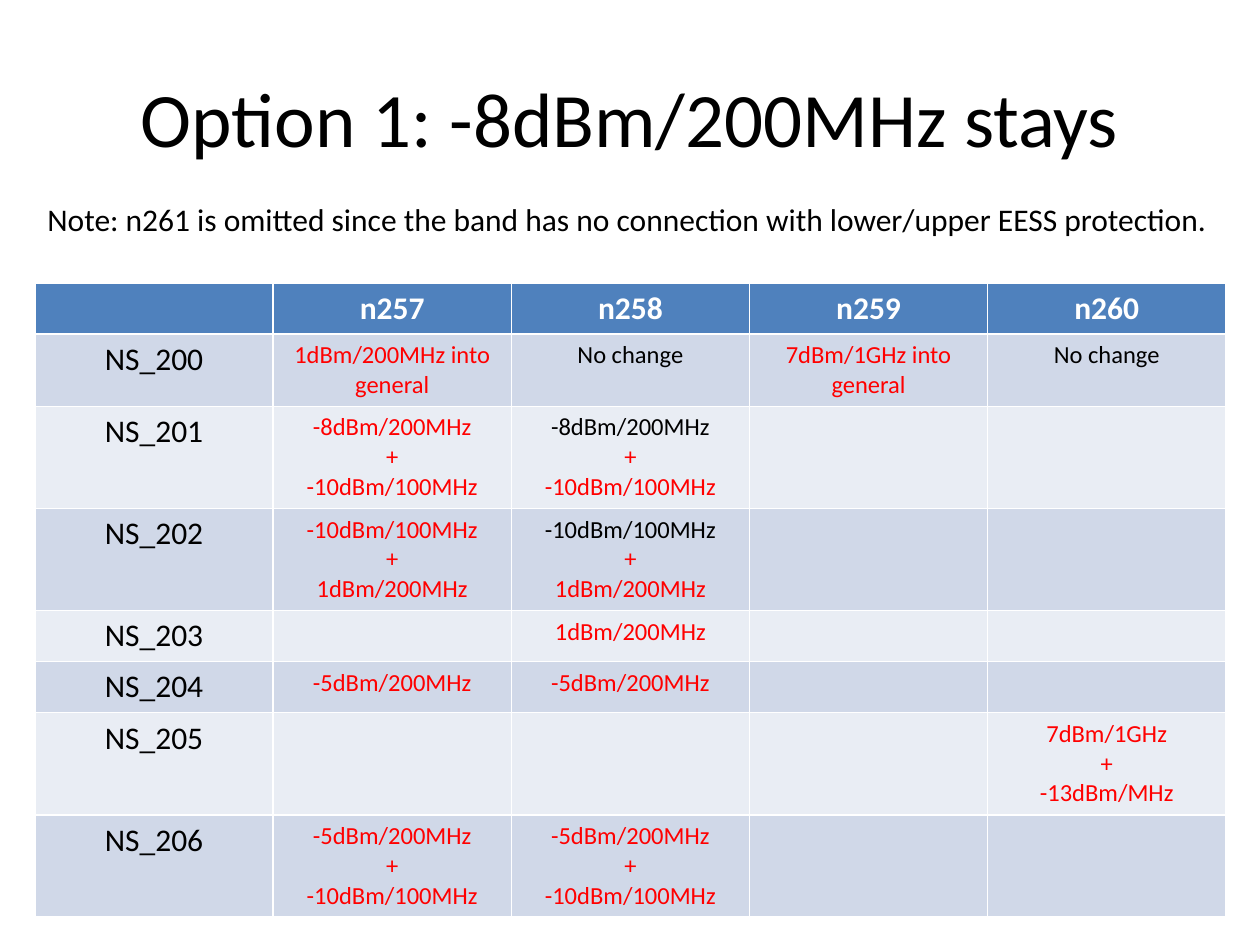
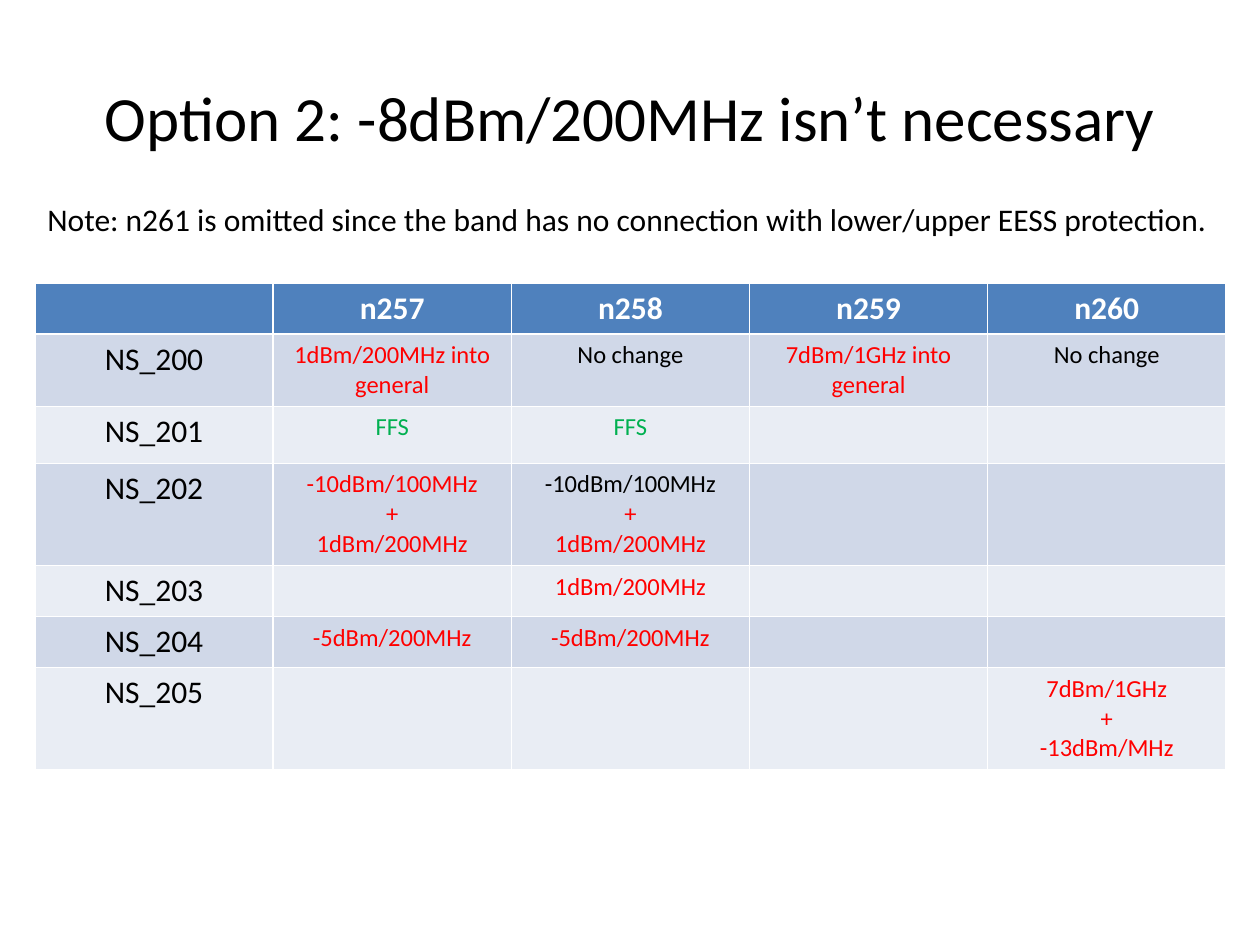
"""Build two slides that compare emission options per band."""
from dataclasses import dataclass

from pptx import Presentation
from pptx.dml.color import RGBColor
from pptx.enum import text as tx


@dataclass(frozen=True)
class Theme:
    """Colours and type of the deck."""
    font: str = "Calibri"
    black: str = "000000"
    white: str = "FFFFFF"
    red: str = "FF0000"
    green: str = "00B050"
    head: str = "4F81BD"
    bands: tuple = ("D0D8E8", "E9EDF4")
    large: int = 18
    small: int = 14


T = Theme()
SIZE = (1260, 945)
TITLE = (63, 38, 1134, 157)
NOTE = (35, 194, 1191, 50)
GRID = (35, 283, 1191)
NOTICE = "Note: n261 is omitted since the band has no connection with lower/upper EESS protection."
HEADS = ("", "n257", "n258", "n259", "n260")
HIGH = {1: 51, 2: 72, 3: 102}

# Cell: colour of the first line, then its lines; later lines are red.
NONE = (T.black,)
SAME = (T.black, "No change")
FFS = (T.green, "FFS")
FIVE = (T.red, "-5dBm/200MHz")
TEN = ("+", "-10dBm/100MHz")
ONE = ("-10dBm/100MHz", "+", "1dBm/200MHz")
ROWS = {
    "NS_200": (72, (T.red, "1dBm/200MHz into general"), SAME,
               (T.red, "7dBm/1GHz into general"), SAME),
    "NS_201": (102, (T.red, "-8dBm/200MHz", *TEN), (T.black, "-8dBm/200MHz", *TEN), NONE, NONE),
    "NS_202": (102, (T.red, *ONE), (T.black, *ONE), NONE, NONE),
    "NS_203": (51, NONE, (T.red, "1dBm/200MHz"), NONE, NONE),
    "NS_204": (51, FIVE, FIVE, NONE, NONE),
    "NS_205": (102, NONE, NONE, NONE, (T.red, "7dBm/1GHz", "+", "-13dBm/MHz")),
    "NS_206": (102, FIVE + TEN, FIVE + TEN, NONE, NONE),
}
LESS = {k: v for k, v in ROWS.items() if k != "NS_206"}
LESS["NS_201"] = (57, FFS, FFS, NONE, NONE)
DECK = (
    ("Option 1: -8dBm/200MHz stays", 44, ROWS),
    ("Option 2: -8dBm/200MHz isn’t necessary", 36, LESS),
)


def px(val):
    """Turn px into EMU."""
    return val * 914400 // 126


def place(shape, box):
    """Move a shape into a box."""
    for name, val in zip(("left", "top", "width", "height"), box):
        setattr(shape, name, px(val))


def write(frame, lines, size, bold=False, align=tx.PP_ALIGN.CENTER):
    """Fill a frame with one paragraph per (words, colour) pair."""
    for num, (words, ink) in enumerate(lines):
        para = frame.add_paragraph() if num else frame.paragraphs[0]
        para.alignment = align
        run = para.add_run()
        run.text = words
        form = {"name": T.font, "size": size * 12700, "bold": bold}
        for name, val in form.items():
            setattr(run.font, name, val)
        run.font.color.rgb = RGBColor.from_string(ink)


def title(slide, box, words, size):
    """Move and format the title."""
    shape = slide.shapes.title
    place(shape, box)
    frame = shape.text_frame
    form = {"auto_size": tx.MSO_AUTO_SIZE.NONE, "word_wrap": True,
            "vertical_anchor": tx.MSO_ANCHOR.MIDDLE}
    for name, val in form.items():
        setattr(frame, name, val)
    write(frame, [(words, T.black)], size)


def note(slide, box):
    """Add the note above the table."""
    frame = slide.shapes.add_textbox(*map(px, box)).text_frame
    frame.word_wrap = True
    frame.auto_size = tx.MSO_AUTO_SIZE.SHAPE_TO_FIT_TEXT
    write(frame, [(NOTICE, T.black)], T.large, align=tx.PP_ALIGN.LEFT)


def paint(cell, fill, lines, size, bold=False):
    """Fill one cell and write its lines."""
    cell.fill.solid()
    cell.fill.fore_color.rgb = RGBColor.from_string(fill)
    write(cell.text_frame, lines, size, bold)


def grid(slide, box, rows):
    """Add the table of bands and signalling values."""
    left, top, width = box
    highs = [51] + [row[0] for row in rows.values()]
    table = slide.shapes.add_table(
        len(highs), len(HEADS), px(left), px(top), px(width), px(sum(highs))).table
    for line, high in zip(table.rows, highs):
        line.height = px(high)
    for col, word in enumerate(HEADS):
        paint(table.cell(0, col), T.head, [(word, T.white)] if word else [], T.large, True)
    for num, (label, (_, *cells)) in enumerate(rows.items()):
        fill = T.bands[num % 2]
        paint(table.cell(num + 1, 0), fill, [(label, T.black)], T.large)
        for col, (ink, *words) in enumerate(cells, 1):
            inks = [ink] + [T.red] * len(words)
            paint(table.cell(num + 1, col), fill, list(zip(words, inks)), T.small)


def option(deck, words, size, rows):
    """Add one option slide."""
    slide = deck.slides.add_slide(deck.slide_layouts[5])
    title(slide, TITLE, words, size)
    grid(slide, GRID, rows)
    note(slide, NOTE)


def main():
    """Build and save the deck."""
    deck = Presentation()
    deck.slide_width, deck.slide_height = map(px, SIZE)
    for item in DECK:
        option(deck, *item)
    deck.save("out.pptx")


if __name__ == "__main__":
    main()
